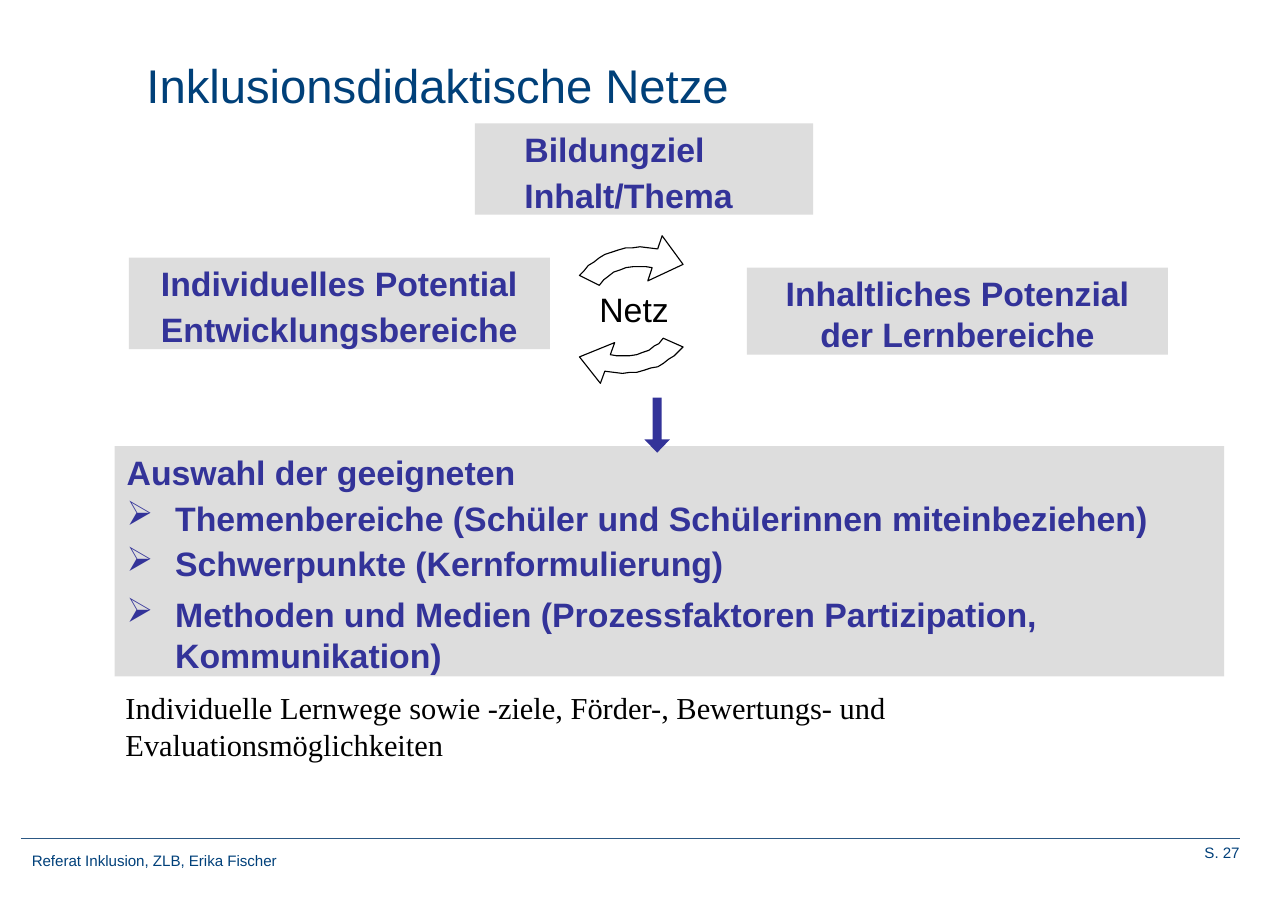
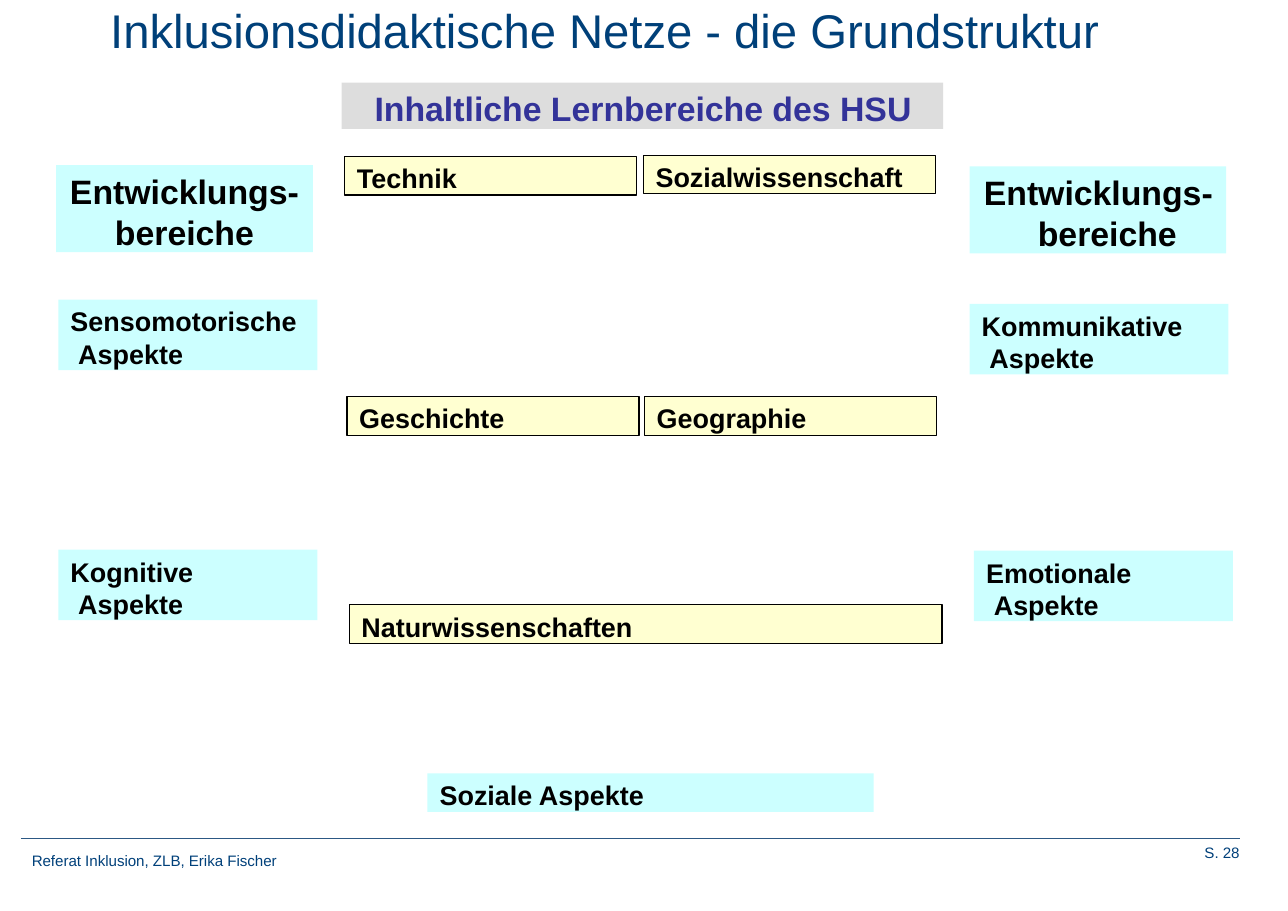
"""Build two slides on inclusive teaching networks, on a grid of tenth-inch cells."""
from lxml import etree
from pptx import Presentation
from pptx.dml.color import RGBColor
from pptx.enum.shapes import MSO_CONNECTOR, MSO_SHAPE
from pptx.enum.text import MSO_ANCHOR, PP_ALIGN
from pptx.oxml.ns import qn
from pptx.util import Inches, Pt

RECTANGLE, DOWN_ARROW = MSO_SHAPE.RECTANGLE, MSO_SHAPE.DOWN_ARROW
STRAIGHT = MSO_CONNECTOR.STRAIGHT
TOP = MSO_ANCHOR.TOP
LEFT, CENTER, RIGHT = PP_ALIGN.LEFT, PP_ALIGN.CENTER, PP_ALIGN.RIGHT

CELL = Inches(0.1)
COLUMNS, ROWS = 116.9, 82.7
TITLE_BLUE, FOOTER_BLUE, RULE_BLUE = "004079", "00407A", "2C5884"
INDIGO, BLACK, GRAY, CYAN, CREAM = "333399", "000000", "DDDDDD", "CCFFFF", "FFFFD1"
TITLE, LARGE, MEDIUM, BODY, SMALL = 30.9, 22.1, 17.6, 19.9, 9.9

color = RGBColor.from_string


def add_text(page, place, text, size, ink, fill=None, outline=None, bold=False,
             align=LEFT, inset=(0, 0), hanging=0, gap=0, font="Arial"):
    left, top, width, height = [round(cells * CELL) for cells in place]
    if fill:
        box = page.shapes.add_shape(RECTANGLE, left, top, width, height)
        box.shadow.inherit = False
        box.fill.solid()
        box.fill.fore_color.rgb = color(fill)
        if outline:
            box.line.color.rgb = color(outline)
            box.line.width = Pt(0.75)
        else:
            box.line.fill.background()
    else:
        box = page.shapes.add_textbox(left, top, width, height)
    frame = box.text_frame
    frame.word_wrap = True
    frame.vertical_anchor = TOP
    frame.margin_left, frame.margin_top = [round(cells * CELL) for cells in inset]
    frame.margin_right = round(inset[0] * CELL) if align == RIGHT else 0
    frame.margin_bottom = 0
    frame.text = text
    for number, para in enumerate(frame.paragraphs):
        para.alignment = align
        if number:
            para.space_before = Pt(gap)
        if hanging:
            properties = para._p.get_or_add_pPr()
            properties.set("marL", str(round(hanging * CELL)))
            properties.set("indent", str(round(-hanging * CELL)))
        for span in para.runs:
            span.font.name = font
            span.font.size = Pt(size)
            span.font.bold = bold
            span.font.color.rgb = color(ink)
    return box


def add_page(deck, title, title_place, number):
    page = deck.slides.add_slide(deck.slide_layouts[6])
    add_text(page, (1.9, 76.8, 86, 2.8), "Referat Inklusion, ZLB, Erika Fischer",
             SMALL, FOOTER_BLUE, inset=(1, 0.5))
    rule = page.shapes.add_connector(STRAIGHT, round(1.9 * CELL), round(76.1 * CELL),
                                     round(112.5 * CELL), round(76.1 * CELL))
    rule.line.color.rgb = color(RULE_BLUE)
    rule.line.width = Pt(0.75)
    etree.SubElement(rule._element.spPr, qn("a:effectLst"))
    add_text(page, (99.9, 76.1, 13.6, 3.7), f"S. {number}", SMALL, FOOTER_BLUE,
             align=RIGHT, inset=(1, 0.5))
    add_text(page, title_place, title, TITLE, TITLE_BLUE)
    return page


deck = Presentation()
deck.slide_width = round(COLUMNS * CELL)
deck.slide_height = round(ROWS * CELL)

page = add_page(deck, "Inklusionsdidaktische Netze", (13.3, 5.1, 98, 5), 27)

for place, text, align, indent in [
    ((43.1, 11.2, 30.7, 8.3), "Bildungziel\nInhalt/Thema", LEFT, 4.5),
    ((67.8, 24.3, 38.2, 7.9), "Inhaltliches Potenzial\vder Lernbereiche", CENTER, 0),
    ((11.7, 23.4, 38.2, 8.3), "Individuelles Potential\nEntwicklungsbereiche", LEFT, 2.9),
]:
    add_text(page, place, text, LARGE, INDIGO, GRAY, bold=True, align=align,
             inset=(indent, 0.5), gap=3.4)

add_text(page, (54.3, 26, 15.5, 3.9), "Netz", LARGE, BLACK, inset=(0.1, 0.2))

arc_arrow = [
    (592, 243), (586, 242), (581, 242), (575, 242), (568, 243), (563, 245),
    (557, 247), (552, 251), (548, 254), (544, 259), (526, 250), (530, 246),
    (534, 241), (539, 238), (544, 234), (549, 231), (555, 229), (561, 227),
    (568, 225), (574, 225), (581, 224), (589, 225), (597, 226), (601, 214),
    (620, 240), (588, 255),
]
turned_arrow = [(1146 - x, 348 - 0.91 * (y - 214)) for x, y in arc_arrow]
for points in (arc_arrow, turned_arrow):
    builder = page.shapes.build_freeform(*points[0], scale=CELL / 10)
    builder.add_line_segments(points[1:], close=True)
    arrow = builder.convert_to_shape()
    arrow.shadow.inherit = False
    arrow.fill.background()
    arrow.line.color.rgb = color(BLACK)
    arrow.line.width = Pt(0.75)

choices = add_text(
    page, (10.4, 40.5, 100.7, 20.9),
    "Auswahl der geeigneten\n"
    "Themenbereiche (Schüler und Schülerinnen miteinbeziehen)\n"
    "Schwerpunkte (Kernformulierung)\n"
    "Methoden und Medien (Prozessfaktoren Partizipation, Kommunikation)",
    LARGE, INDIGO, GRAY, bold=True, inset=(1.1, 0.5), hanging=4.4, gap=3.4)
bulleted = choices.text_frame.paragraphs[1:]
for para in bulleted:
    etree.SubElement(para._p.get_or_add_pPr(), qn("a:buChar")).set("char", "➢")
bulleted[-1].space_before = Pt(6.6)

down = page.shapes.add_shape(DOWN_ARROW, *[round(cells * CELL) for cells in (58.5, 36.1, 2.3, 5)])
down.adjustments[0] = 0.35
down.adjustments[1] = 0.52
down.shadow.inherit = False
down.fill.solid()
down.fill.fore_color.rgb = color(INDIGO)
down.line.fill.background()

add_text(page, (10.4, 62.1, 98.1, 7.7),
         "Individuelle Lernwege sowie -ziele, Förder-, Bewertungs- und Evaluationsmöglichkeiten",
         BODY, BLACK, inset=(1, 0.5), font="Times New Roman")

page = add_page(deck, "Inklusionsdidaktische Netze - die Grundstruktur", (10, 0.1, 98.1, 5), 28)

add_text(page, (31, 7.5, 54.6, 4.2), "Inhaltliche Lernbereiche des HSU", LARGE, INDIGO,
         GRAY, bold=True, inset=(3, 0.5))

for left, top, align, indent, hanging in [(5.1, 15, CENTER, 0, 0), (88, 15.1, LEFT, 1.3, 4.9)]:
    add_text(page, (left, top, 23.3, 7.9), "Entwicklungs-\vbereiche", LARGE, BLACK, CYAN,
             bold=True, align=align, inset=(indent, 0.5), hanging=hanging)

for left, top, width, subject in [
    (31.3, 14.2, 26.5, "Technik"),
    (58.4, 14.1, 26.5, "Sozialwissenschaft"),
    (31.5, 36, 26.5, "Geschichte"),
    (58.5, 36, 26.5, "Geographie"),
    (31.7, 54.9, 53.8, "Naturwissenschaften"),
]:
    add_text(page, (left, top, width, 3.5), subject, MEDIUM, BLACK, CREAM, BLACK,
             bold=True, inset=(1.1, 0.5))

for left, top, width, height, aspect in [
    (5.3, 27.2, 23.5, 6.4, "Sensomotorische\vAspekte"),
    (88, 27.6, 23.5, 6.4, "Kommunikative\vAspekte"),
    (5.3, 49.9, 23.5, 6.4, "Kognitive\vAspekte"),
    (88.4, 50, 23.5, 6.4, "Emotionale\vAspekte"),
    (38.8, 70.2, 40.5, 3.5, "Soziale Aspekte"),
]:
    add_text(page, (left, top, width, height), aspect, MEDIUM, BLACK, CYAN,
             bold=True, inset=(1.1, 0.5), hanging=0.7)

deck.save("out.pptx")
